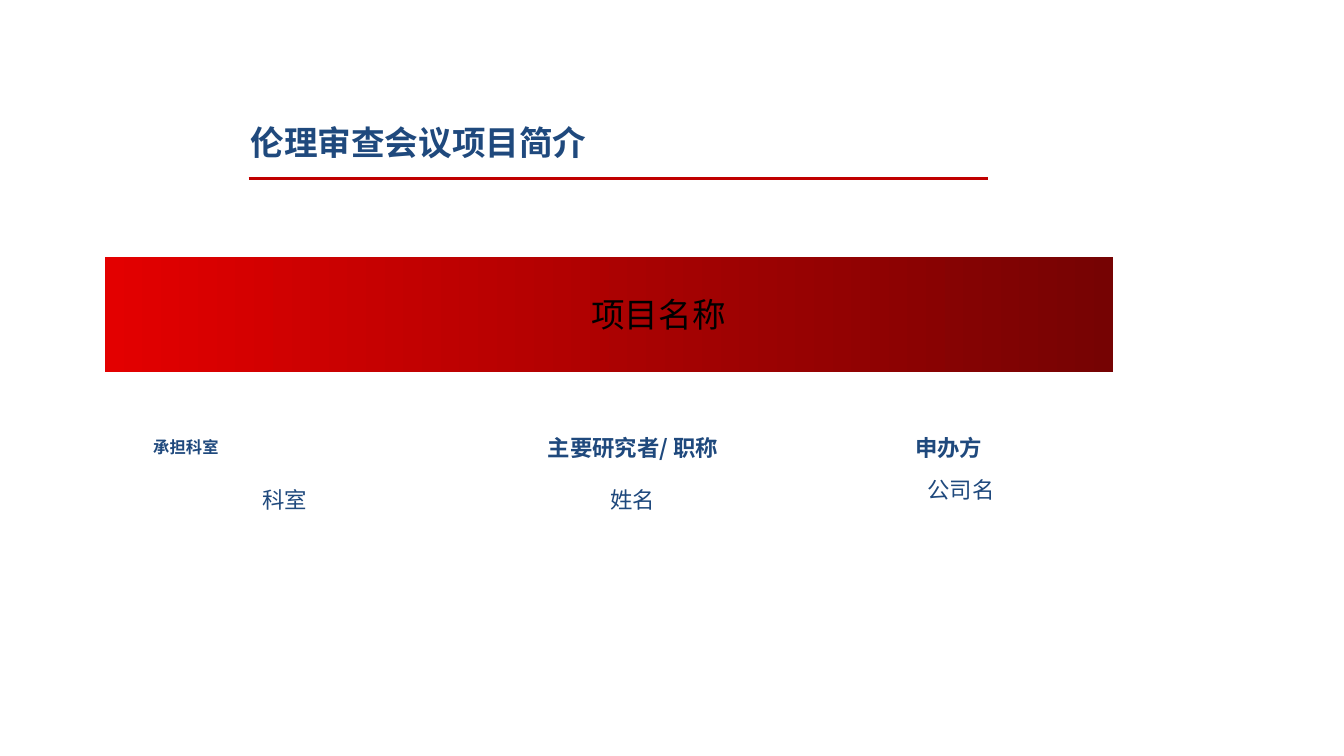
from lxml import etree
from pptx import Presentation
from pptx.dml.color import RGBColor
from pptx.enum.shapes import MSO_CONNECTOR
from pptx.enum.text import MSO_ANCHOR, MSO_AUTO_SIZE, PP_ALIGN
from pptx.oxml.ns import qn
from pptx.util import Inches, Pt

STRAIGHT = MSO_CONNECTOR.STRAIGHT
TOP, MIDDLE = MSO_ANCHOR.TOP, MSO_ANCHOR.MIDDLE
LEFT, CENTER = PP_ALIGN.LEFT, PP_ALIGN.CENTER
NO_AUTOFIT = MSO_AUTO_SIZE.NONE

FONT = "Noto Sans CJK SC"
BLACK = RGBColor(0x00, 0x00, 0x00)
NAVY = RGBColor(0x1F, 0x49, 0x7D)
RULE_RED = RGBColor(0xC0, 0x00, 0x00)
BANNER_COLORS = (RGBColor(0xE3, 0x00, 0x00), RGBColor(0x76, 0x03, 0x03))

FIELD_WIDTH, FIELD_HEIGHT = 2.44, 0.31
LABEL_TOP, VALUE_TOP = 3.18, 3.57
DEFAULT_INSETS = (0.1, 0.05, 0.1, 0.05)


def place(shape, left, top, width, height):
    shape.left, shape.top = Inches(left), Inches(top)
    shape.width, shape.height = Inches(width), Inches(height)


def write_text(shape, text, size, color=NAVY, bold=False, alignment=CENTER,
               anchor=TOP, insets=DEFAULT_INSETS):
    frame = shape.text_frame
    frame.text = text
    frame.word_wrap = True
    frame.auto_size = NO_AUTOFIT
    frame.vertical_anchor = anchor
    (frame.margin_left, frame.margin_top,
     frame.margin_right, frame.margin_bottom) = map(Inches, insets)
    paragraph = frame.paragraphs[0]
    paragraph.alignment = alignment
    paragraph.space_before = Pt(0)
    font = paragraph.runs[0].font
    font.name, font.size, font.bold = FONT, Pt(size), bold
    font.color.rgb = color
    latin = font._element.find(qn("a:latin"))
    east_asian = etree.Element(qn("a:ea"), typeface=FONT)
    latin.addnext(east_asian)


def add_text(slide, text, left, top, width=FIELD_WIDTH, height=FIELD_HEIGHT,
             size=12, **style):
    box = slide.shapes.add_textbox(
        Inches(left), Inches(top), Inches(width), Inches(height))
    write_text(box, text, size, **style)


def format_banner(title):
    place(title, 0.78, 1.91, 7.5, 0.86)
    title.fill.gradient()
    title.fill.gradient_angle = 0
    for position, (stop, color) in enumerate(zip(title.fill.gradient_stops, BANNER_COLORS)):
        stop.position = position
        stop.color.rgb = color
    write_text(title, "项目名称", 18, color=BLACK, anchor=MIDDLE,
               insets=(0.97, 0.04, 0.23, 0.04))


def format_department_label(subtitle):
    place(subtitle, 0.9, LABEL_TOP, FIELD_WIDTH, FIELD_HEIGHT)
    write_text(subtitle, "承担科室", 8.7, bold=True, alignment=LEFT,
               insets=(0.24, 0.07, 0.23, 0.07))


def add_rule(slide, left, right, top):
    rule = slide.shapes.add_connector(
        STRAIGHT, Inches(left), Inches(top), Inches(right), Inches(top))
    rule.line.color.rgb = RULE_RED
    rule.line.width = Pt(1.5)
    etree.SubElement(rule._element.spPr, qn("a:effectLst"))


def main():
    presentation = Presentation()
    presentation.slide_width = Inches(10)
    presentation.slide_height = presentation.slide_width * 9 // 16
    slide = presentation.slides.add_slide(presentation.slide_layouts[0])

    format_banner(slide.shapes.title)
    format_department_label(slide.placeholders[1])
    for text, left in (("主要研究者/ 职称", 3.49), ("申办方", 5.84)):
        add_text(slide, text, left, LABEL_TOP, bold=True)
    for text, left, top in (("科室", 0.9, VALUE_TOP), ("姓名", 3.49, VALUE_TOP),
                            ("公司名", 5.93, 3.49)):
        add_text(slide, text, left, top)
    add_text(slide, "伦理审查会议项目简介", 0.58, 0.79, 5.07, 0.54,
             size=18, bold=True, anchor=MIDDLE)
    add_rule(slide, 1.85, 7.35, 1.33)

    presentation.save("out.pptx")


if __name__ == "__main__":
    main()
